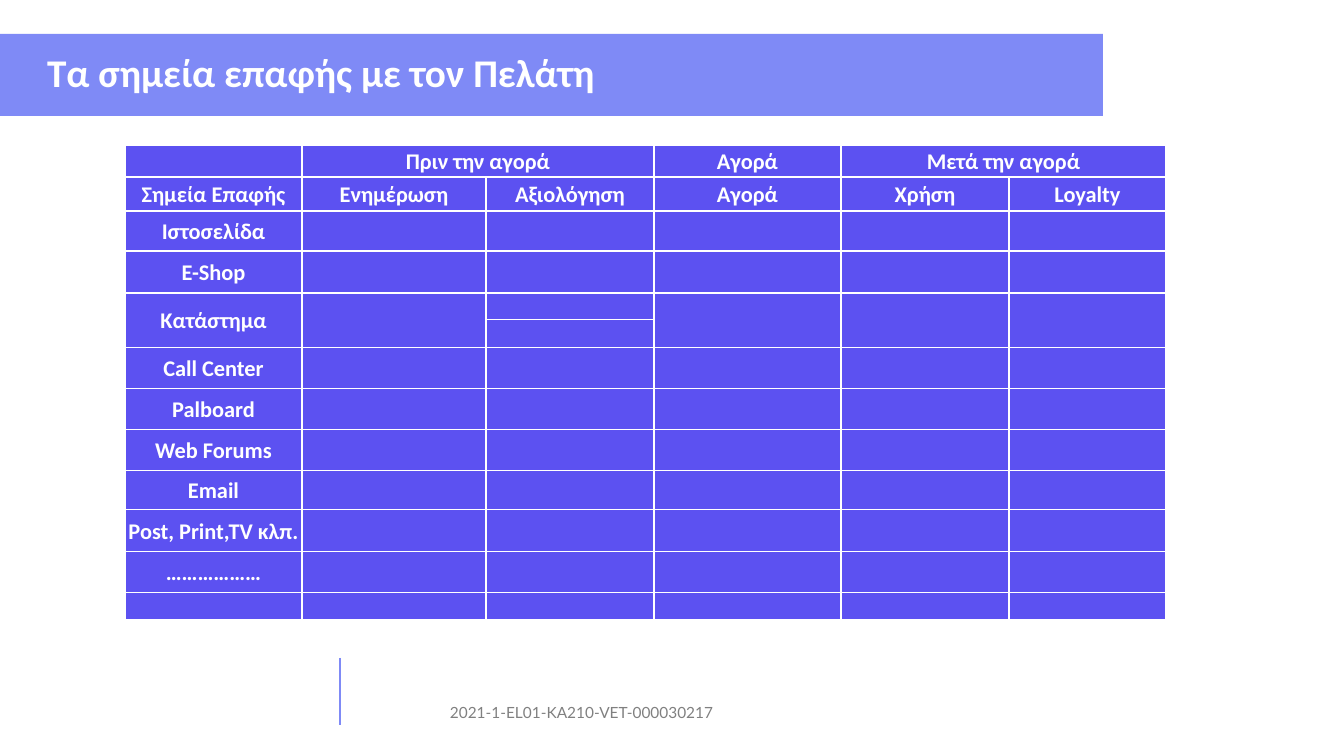
import lxml.etree
import pptx
import pptx.dml.color
import pptx.enum.shapes
import pptx.enum.text
import pptx.oxml.ns
import pptx.util

PX = 12700 * 72 / 100.8
COLORS = {"band": "7F8AF6", "cell": "5C51F1", "light": "FFFFFF", "footer": "808080"}
COLUMNS = [177, 184, 168, 187, 168, 157]
ROWS = [32, 34, 40, 42, 27, 28, 41, 41, 41, 39, 42, 41, 27]
PHASES = {1: "Πριν την αγορά", 3: "Αγορά", 4: "Μετά την αγορά"}
STEPS = ["Σημεία Επαφής", "Ενημέρωση", "Αξιολόγηση", "Αγορά", "Χρήση", "Loyalty"]
TOUCHPOINTS = ["Ιστοσελίδα", "E-Shop", "Κατάστημα", "", "Call Center", "Palboard",
               "Web Forums", "Email", "Post, Print,TV κλπ.", "………………", ""]
STORE_ROW = 2 + TOUCHPOINTS.index("Κατάστημα")


def px(length):
    """Turn pixels into EMU."""
    return pptx.util.Emu(round(length * PX))


def rgb(name):
    """Look up a named colour."""
    return pptx.dml.color.RGBColor.from_string(COLORS[name])


def set_font(paragraph, size, color, face="Calibri", bold=True):
    """Set the font of a whole paragraph."""
    font = paragraph.font
    font.name, font.size, font.bold = face, pptx.util.Pt(size), bold
    font.color.rgb = rgb(color)


def add_footer(slide, left, top, width, height):
    """Place the vertical rule and the project code."""
    rule = slide.shapes.add_connector(
        pptx.enum.shapes.MSO_CONNECTOR.STRAIGHT,
        px(left), px(top), px(left), px(top + height))
    rule.line.color.rgb = rgb("band")
    rule.line.width = pptx.util.Pt(1)
    lxml.etree.SubElement(rule._element.spPr, pptx.oxml.ns.qn("a:effectLst"))
    project_code = slide.shapes.add_textbox(
        px(left + 100), px(top + 40), px(width - 100), px(29)).text_frame
    project_code.word_wrap = True
    project_code.text = "2021-1-EL01-KA210-VET-000030217"
    set_font(project_code.paragraphs[0], 11, "footer", "Lato", False)


def add_heading(slide, left, top, width, height):
    """Place the coloured band with the title on it."""
    band = slide.shapes.add_shape(
        pptx.enum.shapes.MSO_SHAPE.RECTANGLE, px(left), px(top), px(width), px(height))
    band.shadow.inherit = False
    band.fill.solid()
    band.fill.fore_color.rgb = rgb("band")
    band.line.fill.background()
    title = slide.shapes.title
    band._element.addnext(title._element)
    title.left, title.top = px(left + 37), px(top + 18)
    title.width, title.height = px(width - 72), px(45)
    frame = title.text_frame
    frame.text = "Τα σημεία επαφής με τον Πελάτη"
    frame.word_wrap = True
    frame.auto_size = pptx.enum.text.MSO_AUTO_SIZE.NONE
    frame.vertical_anchor = pptx.enum.text.MSO_ANCHOR.MIDDLE
    heading = frame.paragraphs[0]
    heading.alignment = pptx.enum.text.PP_ALIGN.LEFT
    heading.line_spacing = 0.9
    set_font(heading, 28, "light")


def format_cell(cell, text):
    """Write, fill and outline one cell."""
    cell.text = text
    cell.margin_left = cell.margin_right = cell.margin_top = px(1)
    cell.margin_bottom = 0
    cell.vertical_anchor = pptx.enum.text.MSO_ANCHOR.MIDDLE
    cell.fill.solid()
    cell.fill.fore_color.rgb = rgb("cell")
    paragraph = cell.text_frame.paragraphs[0]
    paragraph.alignment = pptx.enum.text.PP_ALIGN.CENTER
    set_font(paragraph, 16 if text else 12, "light")
    if not text:
        lxml.etree.SubElement(paragraph._p, pptx.oxml.ns.qn("a:endParaRPr"), sz="1200")
    properties = cell._tc.get_or_add_tcPr()
    for place, side in enumerate(("lnL", "lnR", "lnT", "lnB")):
        border = pptx.oxml.parse_xml(
            f'<a:{side} {pptx.oxml.ns.nsdecls("a")} w="12700"><a:solidFill>'
            f'<a:srgbClr val="{COLORS["light"]}"/></a:solidFill></a:{side}>')
        properties.insert(place, border)


def add_touchpoints(slide, left, top, width, height):
    """Place the table of touchpoints against purchase phases."""
    table = slide.shapes.add_table(
        len(ROWS), len(COLUMNS), px(left), px(top), px(width), px(height)).table
    table.first_row = table.horz_banding = False
    for column, column_width in zip(table.columns, COLUMNS):
        column.width = px(column_width)
    for row, row_height in zip(table.rows, ROWS):
        row.height = px(row_height)
    phases = [PHASES.get(index, "") for index in range(len(COLUMNS))]
    blanks = [""] * (len(COLUMNS) - 1)
    contents = [phases, STEPS] + [[name] + blanks for name in TOUCHPOINTS]
    for row_index, texts in enumerate(contents):
        for column_index, text in enumerate(texts):
            format_cell(table.cell(row_index, column_index), text)
    for first in (1, 4):
        table.cell(0, first).merge(table.cell(0, first + 1))
    for column_index in (0, 1, 3, 4, 5):
        table.cell(STORE_ROW, column_index).merge(table.cell(STORE_ROW + 1, column_index))


def main():
    """Build the slide and save it."""
    presentation = pptx.Presentation()
    presentation.slide_width, presentation.slide_height = px(1344), px(756)
    slide = presentation.slides.add_slide(presentation.slide_layouts[5])
    add_footer(slide, 340, 658, 466, 67)
    add_heading(slide, 0, 34, 1103, 82)
    add_touchpoints(slide, 125, 145, sum(COLUMNS), sum(ROWS))
    presentation.save("out.pptx")


if __name__ == "__main__":
    main()
